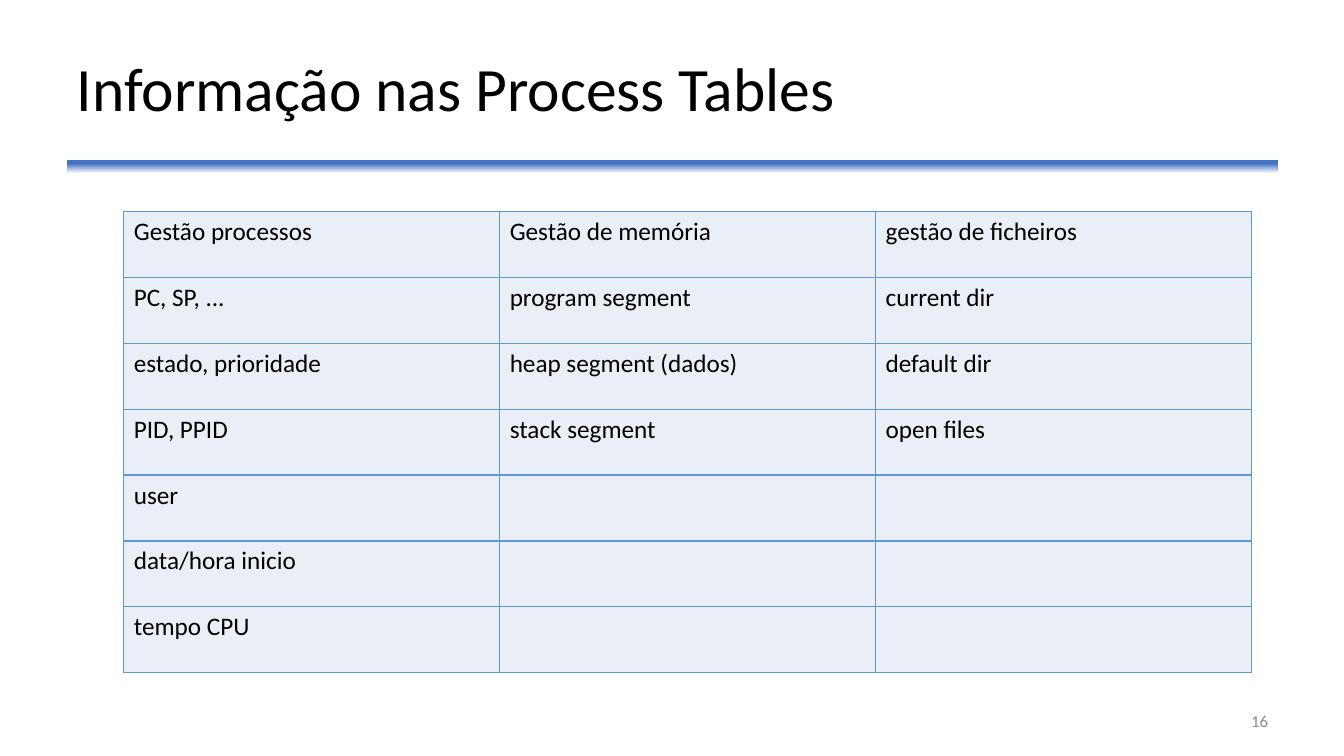
from lxml.etree import SubElement
from pptx import Presentation
from pptx.dml.color import RGBColor
from pptx.enum.shapes import MSO_SHAPE
from pptx.enum.text import MSO_ANCHOR as Anchor, PP_ALIGN as Align
from pptx.oxml.ns import qn
from pptx.util import Cm, Pt


def color(code):
    return RGBColor.from_string(code)


def write(frame, text, size=18, ink="000000", align=Align.LEFT, anchor=Anchor.TOP, spacing=1.0):
    frame.word_wrap = True
    frame.vertical_anchor = anchor
    line = frame.paragraphs[0]
    line.alignment = align
    line.line_spacing = spacing
    run = line.add_run()
    run.text = text
    run.font.name = "Calibri"
    run.font.size = Pt(size)
    run.font.color.rgb = color(ink)


deck = Presentation()
deck.slide_width, deck.slide_height = Cm(33.87), Cm(19.05)
slide = deck.slides.add_slide(deck.slide_layouts[6])

left, width = Cm(1.68), Cm(30.53)

rule = slide.shapes.add_shape(MSO_SHAPE.RECTANGLE, left, Cm(4.04), width, Cm(0.33))
rule.shadow.inherit = False
rule.line.fill.background()
rule.fill.gradient()
rule.fill.gradient_angle = 270
for stop, (position, code) in zip(rule.fill.gradient_stops, [(0.25, "4472C4"), (1, "FFFFFF")]):
    stop.position = position
    stop.color.rgb = color(code)

title = slide.shapes.add_textbox(left, Cm(0.64), width, Cm(3.35))
write(title.text_frame, "Informação nas Process Tables", size=44, anchor=Anchor.MIDDLE, spacing=0.9)

process_info = [
    ("Gestão processos", "Gestão de memória", "gestão de ficheiros"),
    ("PC, SP, ...", "program segment", "current dir"),
    ("estado, prioridade", "heap segment (dados)", "default dir"),
    ("PID, PPID", "stack segment", "open files"),
    ("user", "", ""),
    ("data/hora inicio", "", ""),
    ("tempo CPU", "", ""),
]
process_table = slide.shapes.add_table(
    len(process_info), 3, Cm(3.12), Cm(5.33), Cm(28.42), Cm(11.6)
).table
process_table.first_row = False
process_table.horz_banding = False

for row, entries in zip(process_table.rows, process_info):
    row.height = Cm(1.66)
    for cell, entry in zip(row.cells, entries):
        properties = cell._tc.get_or_add_tcPr()
        for side in ("lnL", "lnR", "lnT", "lnB"):
            border = SubElement(properties, qn(f"a:{side}"), w=str(Pt(1)))
            paint = SubElement(border, qn("a:solidFill"))
            SubElement(paint, qn("a:srgbClr"), val="5B9BD5")
        cell.fill.solid()
        cell.fill.fore_color.rgb = color("EAEFF7")
        if entry:
            write(cell.text_frame, entry)

page_number = slide.shapes.add_textbox(Cm(23.93), Cm(17.65), Cm(8.28), Cm(1.02))
write(page_number.text_frame, "16", size=12, ink="8C8C8C", align=Align.RIGHT, anchor=Anchor.MIDDLE)

deck.save("out.pptx")
